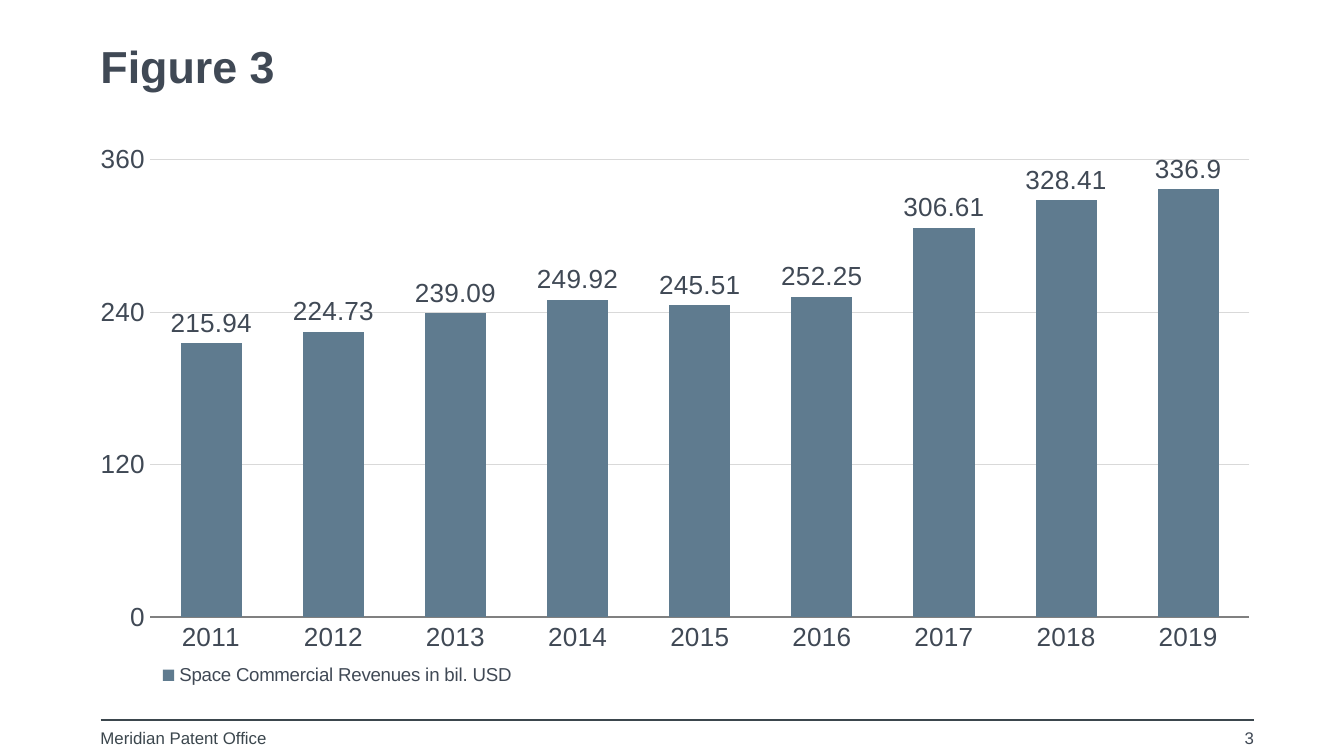
from dataclasses import dataclass

from lxml.etree import SubElement
from pptx import Presentation
from pptx.chart.data import CategoryChartData
from pptx.dml.color import RGBColor
from pptx.enum.chart import XL_CHART_TYPE as ChartType
from pptx.enum.chart import XL_LEGEND_POSITION as LegendPosition
from pptx.enum.chart import XL_TICK_MARK as TickMark
from pptx.enum.shapes import MSO_CONNECTOR as Connector
from pptx.enum.text import MSO_ANCHOR as Anchor
from pptx.enum.text import PP_ALIGN as Align
from pptx.oxml import parse_xml
from pptx.oxml.ns import nsdecls, qn
from pptx.util import Cm, Pt


@dataclass(frozen=True)
class Theme:
    font: str = "Arial"
    ink: RGBColor = RGBColor(0x40, 0x49, 0x55)
    footer: RGBColor = RGBColor(0x3B, 0x46, 0x4D)
    bar: RGBColor = RGBColor(0x5F, 0x7B, 0x8F)
    axis: RGBColor = RGBColor(0x80, 0x80, 0x80)
    grid: RGBColor = RGBColor(0xD9, 0xD9, 0xD9)
    label_fill: RGBColor = RGBColor(0xFF, 0xFF, 0xFF)
    title_size: Pt = Pt(24)
    title_leading: Pt = Pt(28)
    chart_size: Pt = Pt(14)
    legend_size: Pt = Pt(10)
    footer_size: Pt = Pt(9)
    hairline: Pt = Pt(0.75)


THEME = Theme()
LEFT, WIDTH = 1.9, 21.8
AXIS_TOP, AXIS_STEP = 360, 120
PLOT = (0.043, 0.027, 0.953, 0.832)
LEGEND = (0.03, 0.93, 0.35, 0.07)
LABEL_LIFT = 0.036
SERIES_NAME = "Space Commercial Revenues in bil. USD"
REVENUES = {
    "2011": 215.94, "2012": 224.73, "2013": 239.09,
    "2014": 249.92, "2015": 245.51, "2016": 252.25,
    "2017": 306.61, "2018": 328.41, "2019": 336.9,
}


def style_font(font, size, color, bold=False):
    font.name = THEME.font
    font.size = size
    font.bold = bold
    font.color.rgb = color


def add_text(page, box, text, size, color, bold=False, align=Align.LEFT,
             anchor=Anchor.TOP, leading=None):
    frame = page.shapes.add_textbox(*map(Cm, box)).text_frame
    frame.word_wrap = True
    frame.vertical_anchor = anchor
    frame.margin_left = frame.margin_right = 0
    frame.margin_top = frame.margin_bottom = 0
    para = frame.paragraphs[0]
    para.alignment = align
    para.line_spacing = leading
    run = para.add_run()
    run.text = text
    style_font(run.font, size, color, bold)


def manual_layout(**values):
    layout = parse_xml(f"<c:layout {nsdecls('c')}><c:manualLayout/></c:layout>")
    for name, value in values.items():
        SubElement(layout[0], qn(f"c:{name}")).set("val", str(value))
    return layout


def box_layout(box, **target):
    x, y, w, h = box
    return manual_layout(**target, xMode="edge", yMode="edge", x=x, y=y, w=w, h=h)


def remove_layout(element):
    for layout in element.findall(qn("c:layout")):
        element.remove(layout)


def add_title(page, box):
    add_text(page, box, "Figure 3", THEME.title_size, THEME.ink, bold=True,
             anchor=Anchor.MIDDLE, leading=THEME.title_leading)


def style_axes(chart):
    years, amounts = chart.category_axis, chart.value_axis
    for axis in (years, amounts):
        axis.major_tick_mark = axis.minor_tick_mark = TickMark.NONE
        style_font(axis.tick_labels.font, THEME.chart_size, THEME.ink)
    years.format.line.color.rgb = THEME.axis
    years.format.line.width = THEME.hairline
    amounts.format.line.fill.background()
    amounts.minimum_scale, amounts.maximum_scale = 0, AXIS_TOP
    amounts.major_unit = AXIS_STEP
    amounts.tick_labels.number_format = "#,##0"
    amounts.tick_labels.number_format_is_linked = False
    grid = amounts.major_gridlines.format.line
    grid.color.rgb = THEME.grid
    grid.width = THEME.hairline


def label_above_bars(series):
    labels = series.data_labels
    labels.show_value = True
    style_font(labels.font, THEME.chart_size, THEME.ink)
    for index, value in enumerate(series.values):
        style_font(series.points[index].data_label.font, THEME.chart_size, THEME.ink)
        rise = value / AXIS_TOP * PLOT[3] / 2 + LABEL_LIFT
        marker = labels._element.xpath(f"c:dLbl/c:idx[@val='{index}']")[0]
        marker.addnext(parse_xml(
            f"<c:spPr {nsdecls('c', 'a')}><a:solidFill>"
            f'<a:srgbClr val="{THEME.label_fill}"/></a:solidFill></c:spPr>'))
        marker.addnext(manual_layout(x=0, y=round(-rise, 4)))
    for leader in labels._element.xpath(".//c:showLeaderLines"):
        leader.set("val", "0")


def add_legend(chart):
    chart.has_legend = True
    legend = chart.legend
    legend.position = LegendPosition.BOTTOM
    legend.include_in_layout = False
    style_font(legend.font, THEME.legend_size, THEME.ink)
    element = legend._element
    remove_layout(element)
    element.find(qn("c:legendPos")).addnext(box_layout(LEGEND))


def add_revenue_chart(page, box):
    data = CategoryChartData()
    data.categories = REVENUES.keys()
    data.add_series(SERIES_NAME, REVENUES.values())
    chart = page.shapes.add_chart(
        ChartType.COLUMN_STACKED, *map(Cm, box), data).chart
    chart.has_title = False
    style_font(chart.font, THEME.legend_size, THEME.ink)
    style_axes(chart)
    plot = chart.plots[0]
    plot.gap_width, plot.overlap = 100, 100
    plot.vary_by_categories = False
    series = plot.series[0]
    series.format.fill.solid()
    series.format.fill.fore_color.rgb = THEME.bar
    label_above_bars(series)
    add_legend(chart)
    area = chart._chartSpace.xpath("c:chart/c:plotArea")[0]
    remove_layout(area)
    area.insert(0, box_layout(PLOT, layoutTarget="inner"))


def add_footer(page, box):
    left, top, width, height = box
    rule = page.shapes.add_connector(
        Connector.STRAIGHT, Cm(left), Cm(top), Cm(left + width), Cm(top))
    rule.line.color.rgb = THEME.footer
    rule.line.width = THEME.hairline
    SubElement(rule._element.spPr, qn("a:effectLst"))
    gap, number_width = 0.14, 5.92
    add_text(page, (left, top + gap, 4.32, height - gap),
             "Meridian Patent Office", THEME.footer_size, THEME.footer)
    add_text(page, (left + width - number_width, top + gap, number_width, height - gap),
             "3", THEME.footer_size, THEME.ink, align=Align.RIGHT)


def main():
    deck = Presentation()
    deck.slide_width, deck.slide_height = Cm(25.4), Cm(14.29)
    page = deck.slides.add_slide(deck.slide_layouts[6])
    add_title(page, (LEFT, 0.7, WIDTH, 1.12))
    add_revenue_chart(page, (LEFT, 2.74, WIDTH, 10.39))
    add_footer(page, (LEFT, 13.61, WIDTH, 0.62))
    deck.save("out.pptx")


if __name__ == "__main__":
    main()
